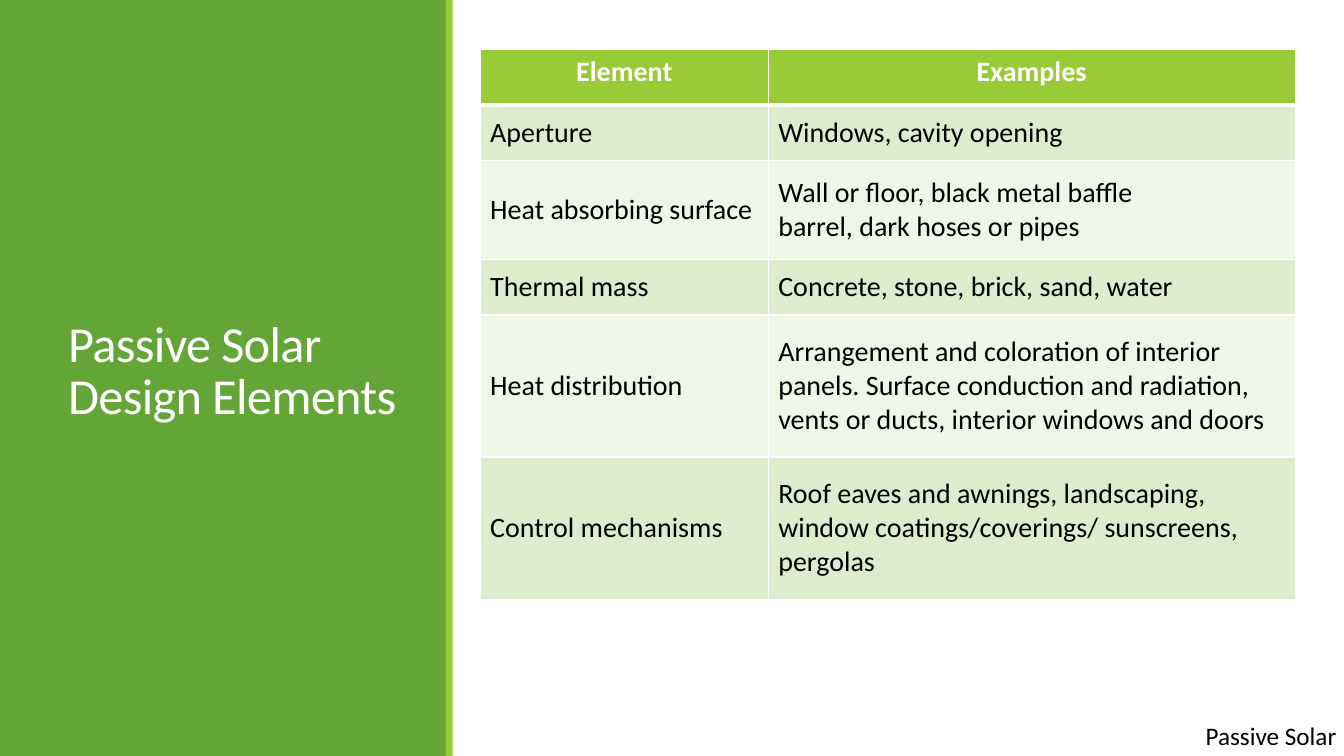
from lxml.etree import SubElement
from pptx import Presentation
from pptx.dml.color import RGBColor
from pptx.enum.shapes import MSO_SHAPE
from pptx.enum.text import MSO_ANCHOR, PP_ALIGN
from pptx.oxml.ns import qn
from pptx.util import Cm, Pt

COLORS = {
    "panel": "63A537",
    "accent": "99CB38",
    "dark band": "DEECCE",
    "light band": "EFF6E8",
    "white": "FFFFFF",
    "black": "000000",
}


def style_text(frame, size, color, align=PP_ALIGN.LEFT, bold=False):
    for para in frame.paragraphs:
        para.alignment = align
        for span in para.runs:
            span.font.name = "Calibri"
            span.font.size = Pt(size)
            span.font.bold = bold
            span.font.color.rgb = RGBColor.from_string(COLORS[color])


def add_border(cell, side, points):
    line = SubElement(cell._tc.get_or_add_tcPr(), qn(f"a:{side}"), w=str(Pt(points)))
    fill = SubElement(line, qn("a:solidFill"))
    SubElement(fill, qn("a:srgbClr"), val=COLORS["white"])


deck = Presentation()
deck.slide_width = Cm(33.87)
deck.slide_height = Cm(19.05)
page = deck.slides.add_slide(deck.slide_layouts[6])

for left, width, color in [(0, 11.25, "panel"), (11.23, 0.18, "accent")]:
    band = page.shapes.add_shape(MSO_SHAPE.RECTANGLE, Cm(left), 0, Cm(width), deck.slide_height)
    band.shadow.inherit = False
    band.fill.solid()
    band.fill.fore_color.rgb = RGBColor.from_string(COLORS[color])
    band.line.fill.background()

footer = page.shapes.add_textbox(Cm(14.55), Cm(18.03), Cm(19.38), Cm(1.02)).text_frame
footer.word_wrap = True
footer.text = "Passive Solar"
style_text(footer, 18, "black", PP_ALIGN.RIGHT)

title = page.shapes.add_textbox(Cm(1.47), Cm(4.47), Cm(8.89), Cm(6.35)).text_frame
title.word_wrap = True
title.vertical_anchor = MSO_ANCHOR.BOTTOM
title.text = "Passive Solar Design Elements"
style_text(title, 36, "white")
title.paragraphs[0].line_spacing = 0.85
title.paragraphs[0].runs[0].font._element.set("spc", "-50")

rows = [
    (1.4, "Element", "Examples"),
    (1.4, "Aperture", "Windows, cavity opening"),
    (2.49, "Heat absorbing surface", "Wall or floor, black metal baffle\nbarrel, dark hoses or pipes"),
    (1.4, "Thermal mass", "Concrete, stone, brick, sand, water"),
    (3.58, "Heat distribution", "Arrangement and coloration of interior panels. Surface conduction "
     "and radiation, vents or ducts, interior windows and doors"),
    (3.58, "Control mechanisms", "Roof eaves and awnings, landscaping, window coatings/coverings/ "
     "sunscreens, pergolas"),
]
column_widths = [7.26, 13.28]
table = page.shapes.add_table(
    len(rows), len(column_widths), Cm(12.1), Cm(1.25),
    Cm(sum(column_widths)), Cm(sum(row[0] for row in rows)),
).table
for column, width in zip(table.columns, column_widths):
    column.width = Cm(width)

for row_index, (height, *texts) in enumerate(rows):
    table.rows[row_index].height = Cm(height)
    header = row_index == 0
    for column_index, text in enumerate(texts):
        cell = table.cell(row_index, column_index)
        cell.text_frame.text = text
        if header:
            style_text(cell.text_frame, 20, "white", PP_ALIGN.CENTER, True)
            color = "accent"
        else:
            style_text(cell.text_frame, 20, "black")
            cell.vertical_anchor = MSO_ANCHOR.MIDDLE
            color = "dark band" if row_index % 2 else "light band"
        for side in ("lnL", "lnR", "lnT", "lnB"):
            thick = (row_index, side) in [(0, "lnB"), (1, "lnT")]
            add_border(cell, side, 3 if thick else 1)
        cell.fill.solid()
        cell.fill.fore_color.rgb = RGBColor.from_string(COLORS[color])

deck.save("out.pptx")
